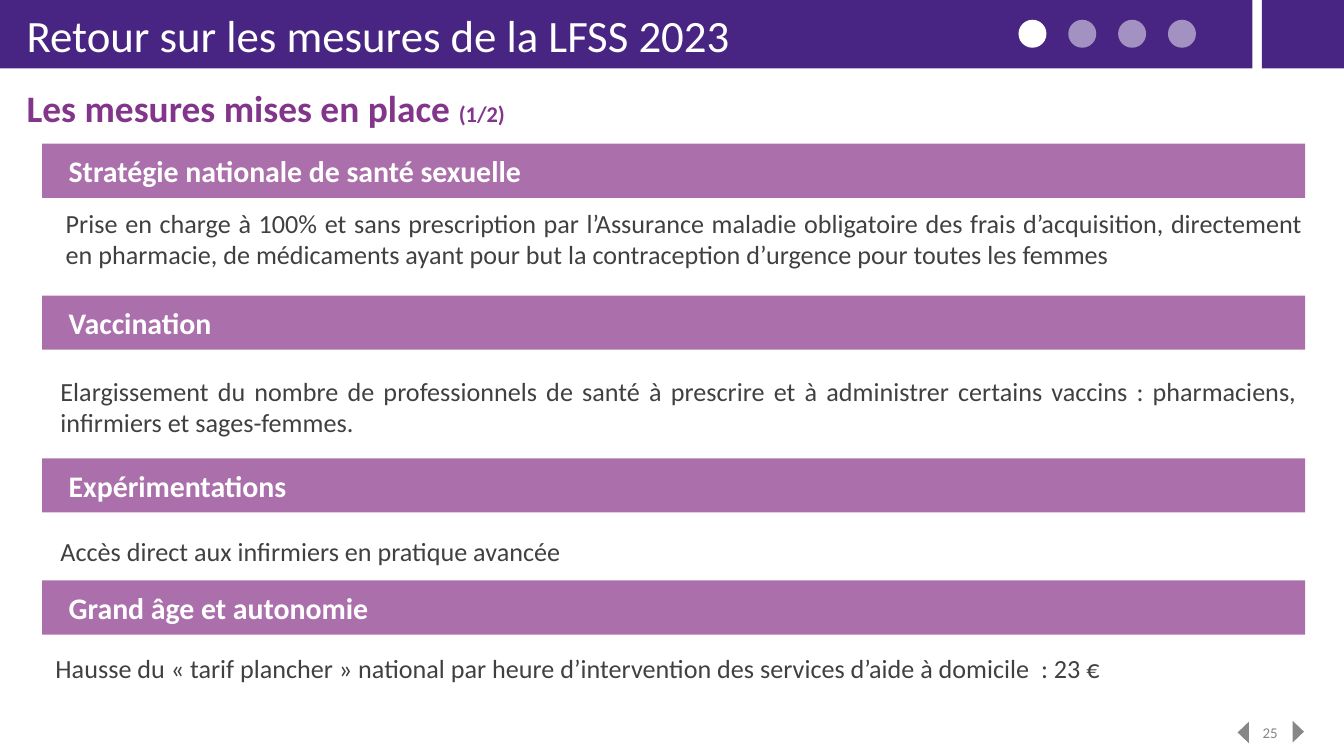
import pptx
import pptx.util
import pptx.dml.color
import pptx.enum.shapes
import pptx.enum.text
import pptx.oxml
import pptx.oxml.ns

Pt = pptx.util.Pt
RGBColor = pptx.dml.color.RGBColor
SHAPE = pptx.enum.shapes.MSO_SHAPE
ALIGN = pptx.enum.text.PP_ALIGN
ANCHOR = pptx.enum.text.MSO_ANCHOR

# Content
TITLE = "Retour sur les mesures de la LFSS 2023"
SUBTITLE = [("Les mesures mises en place ", 20), ("(1/2)", 12)]
PAGE_NUMBER = "25"
# heading, heading top, body, body left, body top, body height
MEASURES = [
    ("Stratégie nationale de santé sexuelle", 77,
     "Prise en charge à 100% et sans prescription par l’Assurance maladie "
     "obligatoire des frais d’acquisition, directement en pharmacie, de "
     "médicaments ayant pour but la contraception d’urgence pour toutes les femmes",
     35.2, 111, 34),
    ("Vaccination", 158.4,
     "Elargissement du nombre de professionnels de santé à prescrire et à "
     "administrer certains vaccins : pharmaciens, infirmiers et sages-femmes.",
     32.4, 200.9, 34),
    ("Expérimentations", 245.5,
     "Accès direct aux infirmiers en pratique avancée", 32.4, 286.6, 17),
    ("Grand âge et autonomie", 311,
     "Hausse du « tarif plancher » national par heure d’intervention "
     "des services d’aide à domicile  : 23 €", 29.7, 349.4, 17),
]

# Style
FONT = "Calibri"
INDIGO = RGBColor(0x48, 0x25, 0x83)
PURPLE = RGBColor(0x82, 0x35, 0x8B)
MAUVE = RGBColor(0xAB, 0x70, 0xAC)
DARK_GREY = RGBColor(0x40, 0x40, 0x40)
GREY = RGBColor(0x87, 0x87, 0x86)
WHITE = RGBColor(0xFF, 0xFF, 0xFF)

# Layout
HEADER_HEIGHT = 36.6
MARGIN = 14.3
HEADING_LEFT, HEADING_WIDTH, HEADING_HEIGHT = 22.6, 676.6, 29
BODY_WIDTH = 663
DOT_LEFT, DOT_TOP, DOT_SIZE, DOT_PITCH, DOT_COUNT = 545.6, 10.6, 15, 26.7, 4


def add_shape(page, kind, left, top, width, height, color):
    shape = page.shapes.add_shape(kind, Pt(left), Pt(top), Pt(width), Pt(height))
    shape.shadow.inherit = False
    shape.fill.solid()
    shape.fill.fore_color.rgb = color
    shape.line.fill.background()
    return shape


def add_box(page, left, top, width, height):
    return page.shapes.add_textbox(Pt(left), Pt(top), Pt(width), Pt(height))


def set_frame(box, anchor=ANCHOR.TOP, inset_x=0, inset_y=0):
    frame = box.text_frame
    frame.word_wrap = True
    frame.vertical_anchor = anchor
    frame.margin_left = frame.margin_right = Pt(inset_x)
    frame.margin_top = frame.margin_bottom = Pt(inset_y)
    return frame.paragraphs[0]


def style(para, size, color, bold=False, align=ALIGN.LEFT):
    para.alignment = align
    para.font.name = FONT
    para.font.size = Pt(size)
    para.font.color.rgb = color
    para.font.bold = bold


def make_translucent(shape, percent):
    color = shape.fill._xPr.find(".//" + pptx.oxml.ns.qn("a:srgbClr"))
    color.append(pptx.oxml.parse_xml(
        f'<a:alpha {pptx.oxml.ns.nsdecls("a")} val="{percent * 1000}"/>'))


deck = pptx.Presentation()
deck.slide_width, deck.slide_height = Pt(720), Pt(405)
page = deck.slides.add_slide(deck.slide_layouts[5])

# Header bands, with the title in front of them
for left, width in [(0, 671), (676, 44)]:
    add_shape(page, SHAPE.RECTANGLE, left, 0, width, HEADER_HEIGHT, INDIGO)
title = page.shapes.title
title.left, title.top, title.width, title.height = Pt(MARGIN), Pt(4.3), Pt(653), Pt(29)
para = set_frame(title)
para.text = TITLE
style(para, 24, WHITE)
page.shapes._spTree.append(title._element)

# Progress dots: the first is the current part
for index in range(DOT_COUNT):
    dot = add_shape(page, SHAPE.OVAL, DOT_LEFT + index * DOT_PITCH, DOT_TOP,
                    DOT_SIZE, DOT_SIZE, WHITE)
    if index > 0:
        make_translucent(dot, 50)

# Subtitle
para = set_frame(add_box(page, MARGIN, 45.4, 653, 20))
style(para, 20, PURPLE, bold=True)
for text, size in SUBTITLE:
    span = para.add_run()
    span.text = text
    span.font.size = Pt(size)

# Measures: heading bar and description
for heading, heading_top, body, body_left, body_top, body_height in MEASURES:
    bar = add_shape(page, SHAPE.RECTANGLE, HEADING_LEFT, heading_top,
                    HEADING_WIDTH, HEADING_HEIGHT, MAUVE)
    para = set_frame(bar, ANCHOR.MIDDLE, 14.2, 8.5)
    para.text = heading
    style(para, 16, WHITE, bold=True)

    para = set_frame(add_box(page, body_left, body_top, BODY_WIDTH, body_height))
    para.text = body
    style(para, 14, DARK_GREY, align=ALIGN.JUSTIFY)
    para.space_after = Pt(6)

# Page number between its arrows
para = set_frame(add_box(page, 664.6, 375.4, 31.6, 21.6), ANCHOR.BOTTOM)
para.text = PAGE_NUMBER
style(para, 8, GREY, align=ALIGN.CENTER)
for left, top, rotation in [(660.3, 389.4, 270), (689.8, 389, 90)]:
    arrow = add_shape(page, SHAPE.ISOSCELES_TRIANGLE, left, top, 11.5, 6, GREY)
    arrow.rotation = rotation

deck.save("out.pptx")
